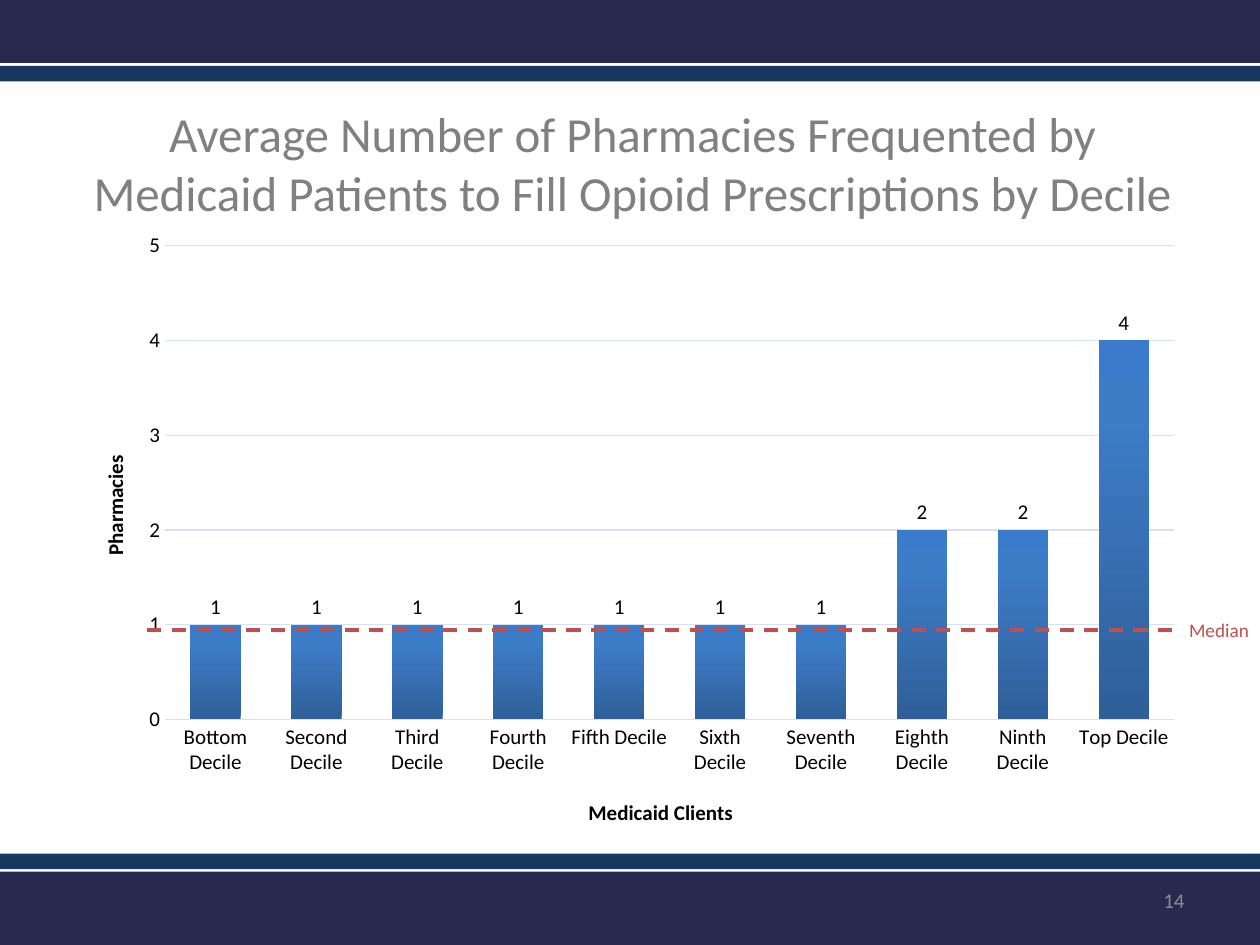
from copy import deepcopy

from lxml import etree
from pptx import Presentation
from pptx.chart.data import CategoryChartData
from pptx.dml.color import RGBColor
from pptx.enum.chart import XL_CHART_TYPE as ChartType
from pptx.enum.chart import XL_LABEL_POSITION as LabelPos
from pptx.enum.chart import XL_TICK_MARK as Tick
from pptx.enum.dml import MSO_LINE_DASH_STYLE as Dash
from pptx.enum.shapes import MSO_CONNECTOR as Connector
from pptx.enum.shapes import MSO_SHAPE as Shape
from pptx.enum.text import MSO_ANCHOR as Anchor
from pptx.enum.text import PP_ALIGN as Align
from pptx.oxml import parse_xml
from pptx.oxml.ns import nsdecls, qn
from pptx.util import Cm, Pt

NAVY = RGBColor(0x28, 0x29, 0x4E)
BLUE = RGBColor(0x17, 0x37, 0x5E)
GRAY = RGBColor(0x80, 0x80, 0x80)
PAGE_GRAY = RGBColor(0x8C, 0x8C, 0x8C)
BLACK = RGBColor(0, 0, 0)
RED = RGBColor(0xC0, 0x50, 0x4D)
GRID = RGBColor(0xD4, 0xE3, 0xF4)
BAR_STOPS = [
    (0, RGBColor(0x2F, 0x5F, 0x99)),
    (0.8, RGBColor(0x3D, 0x7C, 0xC7)),
    (1, RGBColor(0x3A, 0x7C, 0xCB)),
]

RANKS = ["Bottom", "Second", "Third", "Fourth", "Fifth",
         "Sixth", "Seventh", "Eighth", "Ninth", "Top"]
PHARMACIES = [1, 1, 1, 1, 1, 1, 1, 2, 2, 4]


def place(element, index, inner=False, **fractions):
    """Give a chart part a manual layout in fractions of the chart."""
    for old in element.findall(qn("c:layout")):
        element.remove(old)
    target = '<c:layoutTarget val="inner"/>' if inner else ""
    modes = '<c:xMode val="edge"/><c:yMode val="edge"/>'
    sizes = "".join(f'<c:{k} val="{v}"/>' for k, v in fractions.items())
    element.insert(index, parse_xml(
        f'<c:layout {nsdecls("c")}><c:manualLayout>{target}{modes}{sizes}'
        "</c:manualLayout></c:layout>"))


class SlideBuilder:
    font_name = "Calibri"

    def __init__(self, slide):
        self.slide = slide

    def style(self, font, size, color, bold=False):
        font.name = self.font_name
        font.size = Pt(size)
        font.color.rgb = color
        font.bold = bold

    def band(self, top, height, color):
        sp = self.slide.shapes.add_shape(
            Shape.RECTANGLE, 0, Cm(top), Cm(25.4), Cm(height))
        sp.shadow.inherit = False
        sp.fill.solid()
        sp.fill.fore_color.rgb = color
        sp.line.fill.background()

    def fill_text(self, sp, text, size, color, align, anchor):
        tf = sp.text_frame
        tf.text = text
        tf.word_wrap = True
        tf.vertical_anchor = anchor
        p = tf.paragraphs[0]
        p.alignment = align
        self.style(p.runs[0].font, size, color)

    def title(self, text, left, top, width, height):
        sp = self.slide.shapes.title
        sp.left, sp.top, sp.width, sp.height = map(Cm, (left, top, width, height))
        self.fill_text(sp, text, 28, GRAY, Align.CENTER, Anchor.MIDDLE)

    def text(self, text, left, top, width, height, size, color,
             align=Align.LEFT, anchor=Anchor.TOP):
        sp = self.slide.shapes.add_textbox(*map(Cm, (left, top, width, height)))
        self.fill_text(sp, text, size, color, align, anchor)

    def dashed_line(self, x1, x2, y):
        line = self.slide.shapes.add_connector(
            Connector.STRAIGHT, Cm(x1), Cm(y), Cm(x2), Cm(y))
        line.line.color.rgb = RED
        line.line.width = Pt(2)
        line.line.dash_style = Dash.DASH
        etree.SubElement(line._element.spPr, qn("a:effectLst"))

    def axis(self, axis, title, x, y):
        axis.major_tick_mark = axis.minor_tick_mark = Tick.NONE
        self.style(axis.tick_labels.font, 12, BLACK)
        tf = axis.axis_title.text_frame
        tf.text = title
        self.style(tf.paragraphs[0].runs[0].font, 12, BLACK, bold=True)
        place(axis.axis_title._element, 1, x=x, y=y)
        return tf

    def column_chart(self, left, top, width, height):
        data = CategoryChartData()
        data.categories = [f"{rank} Decile" for rank in RANKS]
        data.add_series("Series 1", PHARMACIES)
        chart = self.slide.shapes.add_chart(
            ChartType.COLUMN_CLUSTERED, *map(Cm, (left, top, width, height)),
            data).chart
        chart.has_legend = chart.has_title = False
        self.style(chart.font, 10, BLACK)
        place(chart._chartSpace.chart.plotArea, 0, inner=True,
              x=0.09, y=0.04, w=0.89, h=0.76)

        cat = chart.category_axis
        self.axis(cat, "Medicaid Clients", 0.46, 0.92)
        cat.format.line.color.rgb = GRID
        cat.format.line.width = Pt(0.75)

        val = chart.value_axis
        tf = self.axis(val, "Pharmacies", 0.03, 0.37)
        tf._txBody.bodyPr.set("rot", "-5400000")
        tf._txBody.bodyPr.set("vert", "horz")
        val.minimum_scale, val.maximum_scale, val.major_unit = 0, 5, 1
        val.format.line.fill.background()
        val.major_gridlines.format.line.color.rgb = GRID
        val.major_gridlines.format.line.width = Pt(0.75)

        plot = chart.plots[0]
        plot.gap_width, plot.overlap = 100, -24
        plot.vary_by_categories = False
        self.bar_gradient(plot.series[0])
        labels = plot.series[0].data_labels
        labels.show_value = True
        labels.number_format = "#,##0"
        labels.number_format_is_linked = False
        labels.position = LabelPos.OUTSIDE_END
        self.style(labels.font, 12, BLACK)

    def bar_gradient(self, series):
        fill = series.format.fill
        fill.gradient()
        fill.gradient_angle = 90
        stop_list = next(series._element.iter(qn("a:gsLst")))
        stop_list.append(deepcopy(stop_list[-1]))
        for stop, (position, color) in zip(fill.gradient_stops, BAR_STOPS):
            stop.position = position
            stop.color.rgb = color


def main():
    prs = Presentation()
    prs.slide_width, prs.slide_height = Cm(25.4), Cm(19.05)
    s = SlideBuilder(prs.slides.add_slide(prs.slide_layouts[5]))
    s.band(0, 1.27, NAVY)
    s.band(1.33, 0.31, BLUE)
    s.band(17.57, 1.48, NAVY)
    s.band(17.21, 0.31, BLUE)
    s.title("Average Number of Pharmacies Frequented by Medicaid Patients "
            "to Fill Opioid Prescriptions by Decile", 1.32, 1.9, 22.86, 2.75)
    s.column_chart(1.27, 4.45, 22.86, 12.57)
    s.text("14", 18.2, 17.65, 5.93, 1.01, 12, PAGE_GRAY,
           Align.RIGHT, Anchor.MIDDLE)
    s.dashed_line(2.97, 23.72, 12.7)
    s.text("Median", 23.72, 12.34, 1.9, 0.73, 11, RED)
    prs.save("out.pptx")


if __name__ == "__main__":
    main()
